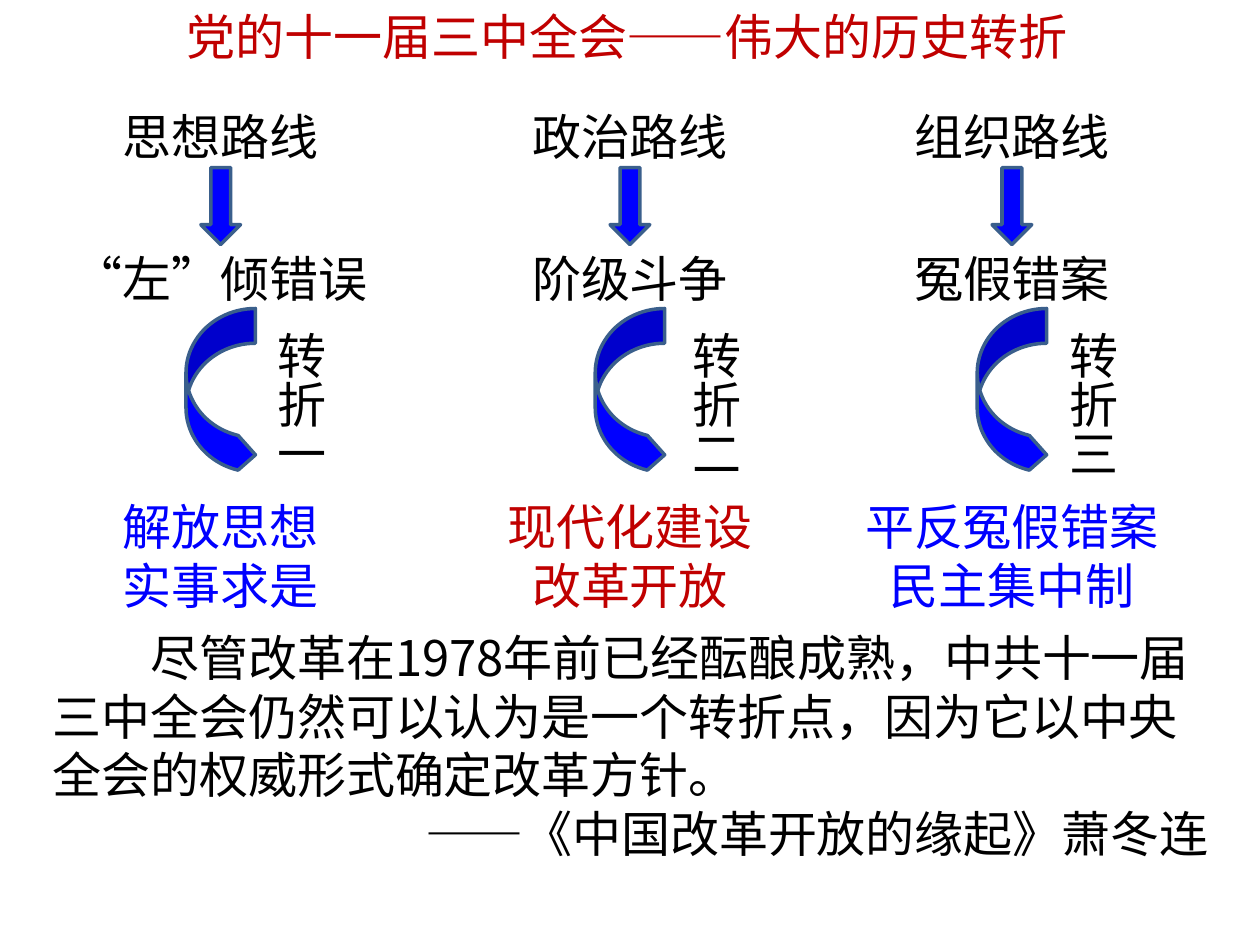
from pptx import Presentation
from pptx.dml.color import RGBColor
from pptx.enum.lang import MSO_LANGUAGE_ID
from pptx.enum.shapes import MSO_SHAPE
from pptx.enum.text import MSO_ANCHOR, MSO_AUTO_SIZE, PP_ALIGN
from pptx.oxml.ns import qn
from pptx.util import Cm, Pt
from lxml import etree

LEFT, CENTER, RIGHT = PP_ALIGN.LEFT, PP_ALIGN.CENTER, PP_ALIGN.RIGHT
DOWN_ARROW, CURVED_ARROW = MSO_SHAPE.DOWN_ARROW, MSO_SHAPE.CURVED_RIGHT_ARROW
TOP, GROW = MSO_ANCHOR.TOP, MSO_AUTO_SIZE.SHAPE_TO_FIT_TEXT
CHINESE = MSO_LANGUAGE_ID.SIMPLIFIED_CHINESE

BLACK = RGBColor(0x00, 0x00, 0x00)
RED = RGBColor(0xC0, 0x00, 0x00)
BLUE = RGBColor(0x00, 0x00, 0xFF)
OUTLINE = RGBColor(0x3A, 0x5F, 0x8C)

TITLE_ONLY = 5
TITLE = "党的十一届三中全会——伟大的历史转折"
QUOTE = ("尽管改革在1978年前已经酝酿成熟，中共十一届三中全会仍然可以认为是一个转折点，"
         "因为它以中央全会的权威形式确定改革方针。")
SOURCE = "——《中国改革开放的缘起》萧冬连"

# Column centre, left of the turn label, width of the result, then the wording
COLUMNS = [
    (4.45, 5.08, 9.5, "思想路线", "“左”倾错误", "转折一", ["解放思想", "实事求是"], BLUE),
    (12.7, 13.44, 6.73, "政治路线", "阶级斗争", "转折二", ["现代化建设", "改革开放"], RED),
    (20.4, 21.03, 7.09, "组织路线", "冤假错案", "转折三", ["平反冤假错案", "民主集中制"], BLUE),
]


class SlideBuilder:
    font_name = "Noto Sans CJK SC"
    font_format = {"name": font_name, "size": Pt(28), "language_id": CHINESE}
    frame_format = {"word_wrap": True, "vertical_anchor": TOP, "auto_size": GROW}

    def __init__(self, slide):
        self.slide = slide

    def fill_frame(self, text_frame, lines, color, alignments):
        for name, value in self.frame_format.items():
            setattr(text_frame, name, value)
        for index, (line, alignment) in enumerate(zip(lines, alignments)):
            paragraph = text_frame.add_paragraph() if index else text_frame.paragraphs[0]
            paragraph.alignment = alignment
            run = paragraph.add_run()
            run.text = line
            for name, value in self.font_format.items():
                setattr(run.font, name, value)
            run.font.color.rgb = color
            east_asian = etree.Element(qn("a:ea"), typeface=self.font_name)
            run.font._element.find(qn("a:latin")).addnext(east_asian)

    def title(self, text, left, top, width, height):
        shape = self.slide.shapes.title
        place = {"left": left, "top": top, "width": width, "height": height}
        for name, value in place.items():
            setattr(shape, name, Cm(value))
        self.fill_frame(shape.text_frame, [text], RED, [CENTER])

    def text(self, lines, left, top, width, height, color=BLACK, alignments=None):
        box = self.slide.shapes.add_textbox(Cm(left), Cm(top), Cm(width), Cm(height))
        self.fill_frame(box.text_frame, lines, color, alignments or [CENTER] * len(lines))
        return box.text_frame

    def centered_text(self, lines, center, top, width, height, color=BLACK):
        self.text(lines, center - width / 2, top, width, height, color)

    def vertical_text(self, text, left, top, width, height):
        frame = self.text([text], left, top, width, height, alignments=[LEFT])
        frame._txBody.bodyPr.set("vert", "eaVert")

    def arrow(self, kind, center, top, width, height, adjustments=()):
        shape = self.slide.shapes.add_shape(
            kind, Cm(center - width / 2), Cm(top), Cm(width), Cm(height))
        for index, value in enumerate(adjustments):
            shape.adjustments[index] = value
        shape.shadow.inherit = False
        shape.fill.solid()
        shape.fill.fore_color.rgb = BLUE
        shape.line.color.rgb = OUTLINE
        shape.line.width = Pt(2)


def main():
    presentation = Presentation()
    presentation.slide_width, presentation.slide_height = Cm(25.4), Cm(19.05)
    slide = presentation.slides.add_slide(presentation.slide_layouts[TITLE_ONLY])
    builder = SlideBuilder(slide)

    builder.title(TITLE, 0.74, 0, 23.8, 1.45)

    # Three lines, each with its old error, turning point and result
    for center, turn_left, result_width, line, error, turn, result, color in COLUMNS:
        builder.centered_text([line], center, 2.03, 6, 1.45)
        builder.arrow(DOWN_ARROW, center, 3.38, 0.8, 1.55)
        builder.centered_text([error], center, 4.88, 7, 1.45)
        builder.arrow(CURVED_ARROW, center, 6.22, 1.4, 3.3, (0.5, 0.5, 0.25))
        builder.vertical_text(turn, turn_left, 6.43, 1.7, 3.7)
        builder.centered_text(result, center, 9.88, result_width, 2.64, color)

    # Quotation with a two-character first-line indent, then its source
    quote = builder.text([QUOTE, SOURCE], 0.81, 12.52, 23.8, 5.05, alignments=[LEFT, RIGHT])
    quote.paragraphs[0]._p.get_or_add_pPr().set("indent", str(Pt(56)))

    presentation.save("out.pptx")


if __name__ == "__main__":
    main()
